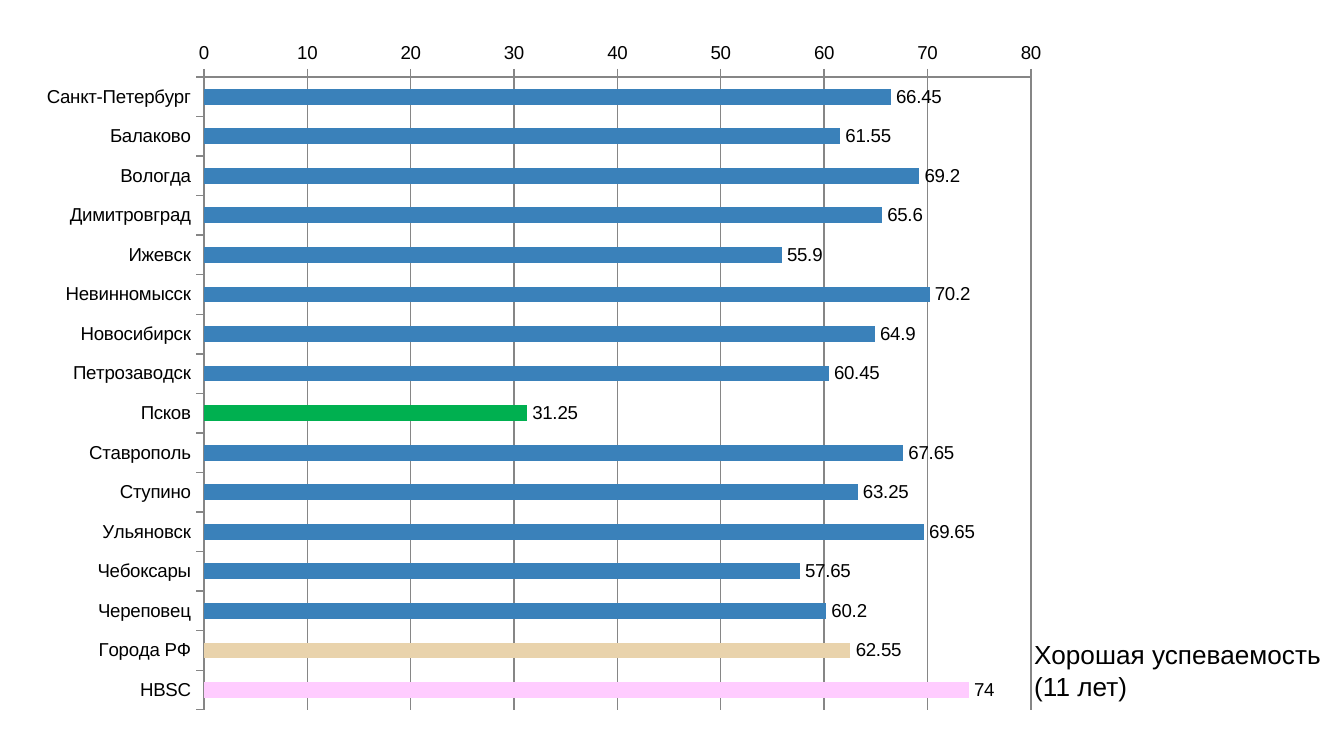
from dataclasses import dataclass

import lxml.etree
import pptx
import pptx.chart.data
import pptx.dml.color
import pptx.enum.chart
import pptx.enum.text
import pptx.oxml
import pptx.oxml.ns
import pptx.util

EMU_PER_PX = 914400 / 134.4
FONT = "Arial"
BLACK = "000000"
GRID = "868686"
CITY_BLUE = "3A81BA"


@dataclass
class Box:
    x: int
    y: int
    w: int
    h: int


@dataclass
class Bar:
    name: str
    value: float
    color: str = CITY_BLUE


SLIDE = Box(0, 0, 1344, 756)
CHART = Box(27, 28, 1036, 695)
PLOT = Box(204, 77, 827, 633)
CAPTION = Box(1021, 632, 323, 77)

BARS = [
    Bar("Санкт-Петербург", 66.45),
    Bar("Балаково", 61.55),
    Bar("Вологда", 69.2),
    Bar("Димитровград", 65.6),
    Bar("Ижевск", 55.9),
    Bar("Невинномысск", 70.2),
    Bar("Новосибирск", 64.9),
    Bar("Петрозаводск", 60.45),
    Bar("Псков", 31.25, "00B050"),
    Bar("Ставрополь", 67.65),
    Bar("Ступино", 63.25),
    Bar("Ульяновск", 69.65),
    Bar("Чебоксары", 57.65),
    Bar("Череповец", 60.2),
    Bar("Города РФ", 62.55, "E9D3AC"),
    Bar("HBSC", 74, "FFCCFF"),
]


def px(n: int) -> int:
    return round(n * EMU_PER_PX)


def rgb(color: str) -> pptx.dml.color.RGBColor:
    return pptx.dml.color.RGBColor.from_string(color)


def place(box: Box) -> list[int]:
    return [px(n) for n in (box.x, box.y, box.w, box.h)]


def style_font(font, size: int) -> None:
    font.name = FONT
    font.size = pptx.util.Pt(size)
    font.color.rgb = rgb(BLACK)


def style_line(line) -> None:
    line.color.rgb = rgb(GRID)
    line.width = pptx.util.Pt(0.75)


def fix_plot_area(chart, outer: Box, inner: Box) -> None:
    plot_area = chart.plots[0]._element.getparent()
    for old in plot_area.findall(pptx.oxml.ns.qn("c:layout")):
        plot_area.remove(old)
    layout = lxml.etree.Element(pptx.oxml.ns.qn("c:layout"))
    manual = lxml.etree.SubElement(layout, pptx.oxml.ns.qn("c:manualLayout"))
    settings = {
        "layoutTarget": "inner",
        "xMode": "edge",
        "yMode": "edge",
        "x": (inner.x - outer.x) / outer.w,
        "y": (inner.y - outer.y) / outer.h,
        "w": inner.w / outer.w,
        "h": inner.h / outer.h,
    }
    for tag, value in settings.items():
        lxml.etree.SubElement(manual, pptx.oxml.ns.qn(f"c:{tag}"), val=str(value))
    plot_area.insert(0, layout)


def add_bar_chart(s, box: Box, inner: Box, bars: list[Bar]) -> None:
    data = pptx.chart.data.CategoryChartData()
    data.categories = [bar.name for bar in bars]
    data.add_series("Series 1", [bar.value for bar in bars])
    kind = pptx.enum.chart.XL_CHART_TYPE.BAR_CLUSTERED
    chart = s.shapes.add_chart(kind, *place(box), data).chart
    chart.has_title = False
    chart.has_legend = False
    style_font(chart.font, 10)

    plot = chart.plots[0]
    plot.gap_width = 150
    plot.vary_by_categories = False
    series = plot.series[0]
    series.invert_if_negative = False
    series.format.fill.solid()
    series.format.fill.fore_color.rgb = rgb(CITY_BLUE)
    for i, bar in enumerate(bars):
        if bar.color != CITY_BLUE:
            fill = series.points[i].format.fill
            fill.solid()
            fill.fore_color.rgb = rgb(bar.color)

    labels = series.data_labels
    labels.show_value = True
    labels.position = pptx.enum.chart.XL_LABEL_POSITION.OUTSIDE_END
    style_font(labels.font, 10)

    chart.category_axis.reverse_order = True
    chart.value_axis.minimum_scale = 0
    chart.value_axis.maximum_scale = 80
    chart.value_axis.major_unit = 10
    chart.value_axis.has_major_gridlines = True
    style_line(chart.value_axis.major_gridlines.format.line)
    for axis in (chart.category_axis, chart.value_axis):
        axis.major_tick_mark = pptx.enum.chart.XL_TICK_MARK.OUTSIDE
        axis.minor_tick_mark = pptx.enum.chart.XL_TICK_MARK.NONE
        style_line(axis.format.line)
    fix_plot_area(chart, box, inner)


def add_caption(s, box: Box, text: str) -> None:
    tf = s.shapes.add_textbox(*place(box)).text_frame
    tf.word_wrap = True
    tf.auto_size = pptx.enum.text.MSO_AUTO_SIZE.SHAPE_TO_FIT_TEXT
    tf.text = text
    style_font(tf.paragraphs[0].runs[0].font, 14)


def main() -> None:
    prs = pptx.Presentation()
    prs.slide_width = px(SLIDE.w)
    prs.slide_height = px(SLIDE.h)
    s = prs.slides.add_slide(prs.slide_layouts[6])
    add_caption(s, CAPTION, "Хорошая успеваемость (11 лет)")
    add_bar_chart(s, CHART, PLOT, BARS)
    prs.save("out.pptx")


if __name__ == "__main__":
    main()
